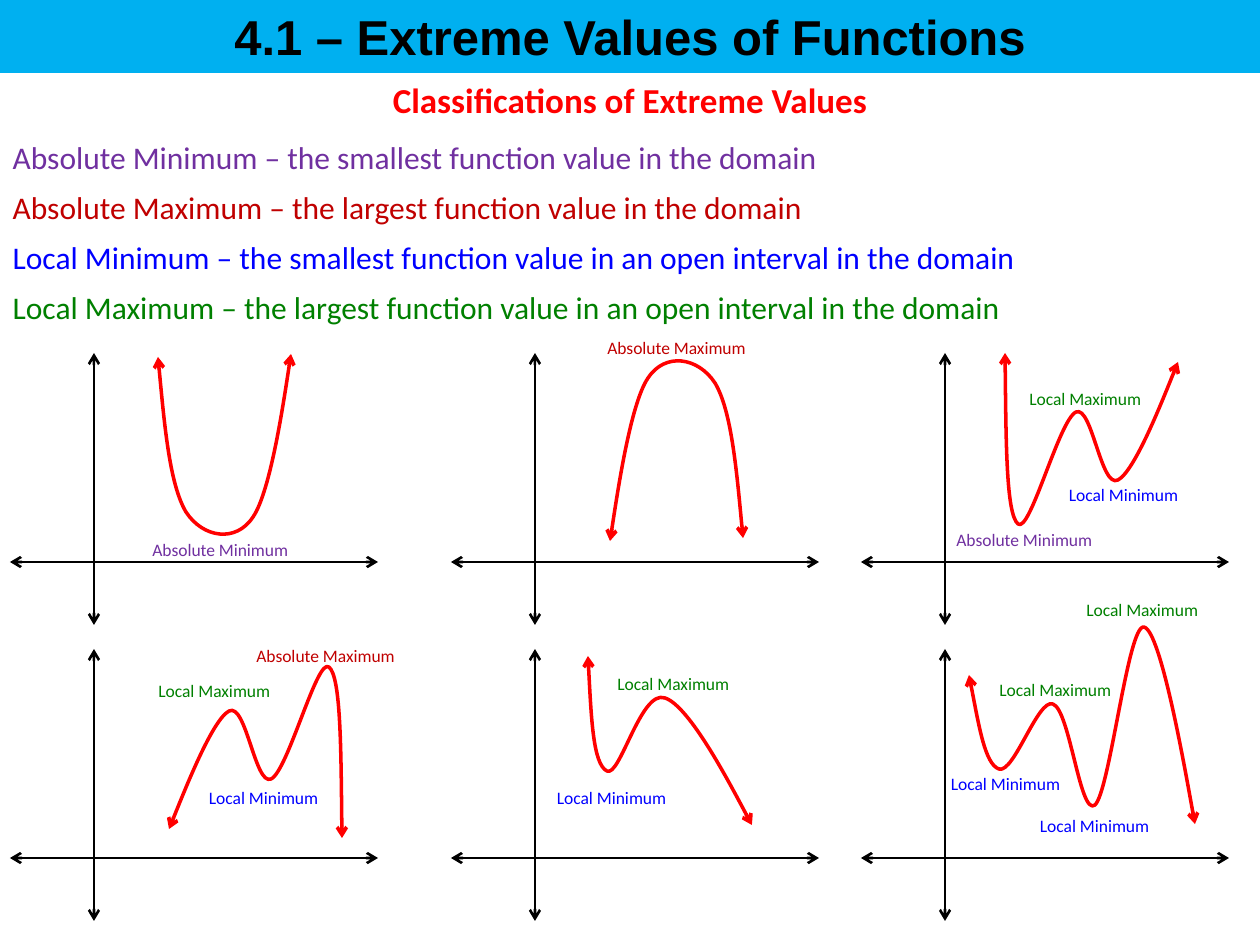
"""Build a slide that classifies the extreme values of functions."""
from dataclasses import dataclass
from itertools import product
from typing import Any

from lxml import etree
from pptx import Presentation
from pptx.dml.color import RGBColor
from pptx.enum.shapes import MSO_CONNECTOR
from pptx.enum.text import MSO_ANCHOR, MSO_AUTO_SIZE, PP_ALIGN
from pptx.oxml.ns import qn
from pptx.util import Emu, Pt

EMU_PER_PX = 914400 / 126
SLIDE_WIDTH, SLIDE_HEIGHT = 1260, 945

STRAIGHT = MSO_CONNECTOR.STRAIGHT
MIDDLE, TOP = MSO_ANCHOR.MIDDLE, MSO_ANCHOR.TOP
NO_AUTOFIT = MSO_AUTO_SIZE.NONE
LEFT, CENTER = PP_ALIGN.LEFT, PP_ALIGN.CENTER

BLACK = RGBColor(0x00, 0x00, 0x00)
SKY = RGBColor(0x00, 0xB0, 0xF0)
RED = RGBColor(0xFF, 0x00, 0x00)
PURPLE = RGBColor(0x70, 0x30, 0xA0)
DARK_RED = RGBColor(0xC0, 0x00, 0x00)
BLUE = RGBColor(0x00, 0x00, 0xFF)
GREEN = RGBColor(0x00, 0x80, 0x00)

TITLE_FONT = {"name": "Arial", "size": Pt(28), "bold": True}
HEADING_FONT = {"name": "Calibri", "size": Pt(20), "bold": True}
DEFINITION_FONT = {"name": "Calibri", "size": Pt(18), "bold": False}
LABEL_FONT = {"name": "Calibri", "size": Pt(10), "bold": False}

AXES_LEFTS, AXES_TOPS = (10, 451, 861), (353, 649)
AXES_WIDTH, AXES_HEIGHT = 368, 272
ORIGIN_X, ORIGIN_Y = 84, 209
LABEL_HEIGHT = 34

Point = tuple[int, int]


@dataclass(frozen=True)
class Extremum:
    """A kind of extreme value with its definition and label places."""
    name: str
    meaning: str
    color: RGBColor
    label_width: int
    align: Any
    labels: tuple[Point, ...]


@dataclass(frozen=True)
class Curve:
    """A chain of cubic Bezier segments inside its own box."""
    width: int
    height: int
    points: tuple[Point, ...]


@dataclass(frozen=True)
class Graph:
    """A curve placed on the slide."""
    curve: Curve
    left: int
    top: int
    rotation: int = 0


EXTREMA = (
    Extremum("Absolute Minimum", "the smallest function value in the domain",
             PURPLE, 171, LEFT, ((140, 533), (944, 523))),
    Extremum("Absolute Maximum", "the largest function value in the domain",
             DARK_RED, 177, LEFT, ((595, 331), (244, 639))),
    Extremum("Local Minimum", "the smallest function value in an open interval in the domain",
             BLUE, 141, CENTER,
             ((1053, 478), (193, 781), (541, 781), (935, 767), (1024, 809))),
    Extremum("Local Maximum", "the largest function value in an open interval in the domain",
             GREEN, 139, LEFT,
             ((1017, 382), (146, 674), (605, 667), (987, 673), (1074, 593))),
)

BOWL = Curve(133, 180, (
    (0, 3), (6, 67), (12, 131), (28, 158), (45, 184), (78, 189), (95, 163),
    (113, 137), (133, 0), (133, 0)))
TWO_VALLEYS = Curve(173, 171, (
    (0, 0), (1, 81), (1, 161), (13, 171), (25, 181), (54, 67), (71, 59),
    (87, 52), (96, 136), (113, 127), (130, 118), (173, 9), (173, 9)))
VALLEY_AND_HILL = Curve(165, 170, (
    (0, 0), (3, 54), (5, 108), (19, 115), (32, 122), (53, 33), (77, 42),
    (102, 50), (164, 169), (164, 169)))
WAVE = Curve(226, 197, (
    (0, 48), (9, 93), (16, 137), (30, 142), (45, 147), (69, 71), (84, 77),
    (101, 83), (111, 190), (126, 178), (141, 164), (159, -3), (175, 0),
    (192, 3), (226, 197), (226, 197)))

GRAPHS = (
    Graph(BOWL, 158, 354),
    Graph(BOWL, 610, 361, 180),
    Graph(TWO_VALLEYS, 1005, 353),
    Graph(TWO_VALLEYS, 169, 667, 180),
    Graph(VALLEY_AND_HILL, 588, 656),
    Graph(WAVE, 969, 627),
)


def px(length: int) -> Emu:
    """Turn px into EMU."""
    return Emu(round(length * EMU_PER_PX))


def set_values(target: Any, values: dict[str, Any]) -> None:
    """Set each attribute named in values."""
    for name, value in values.items():
        setattr(target, name, value)


def place(shape: Any, left: int, top: int, width: int, height: int) -> None:
    """Move and size a shape in px."""
    set_values(shape, {"left": px(left), "top": px(top),
                       "width": px(width), "height": px(height)})


def write(paragraph: Any, text: str, font: dict[str, Any], color: RGBColor, align: Any) -> None:
    """Fill a paragraph with formatted text."""
    paragraph.text = text
    paragraph.alignment = align
    set_values(paragraph.font, font)
    paragraph.font.color.rgb = color


def add_text(slide: Any, box: tuple[int, int, int, int], text: str,
             font: dict[str, Any], color: RGBColor, align: Any) -> None:
    """Add a wrapped one-paragraph text box."""
    frame = slide.shapes.add_textbox(*map(px, box)).text_frame
    frame.word_wrap = True
    write(frame.paragraphs[0], text, font, color, align)


def style_stroke(shape: Any, color: RGBColor, width: float) -> None:
    """Give a line its colour, width and an arrow at both ends."""
    shape.line.color.rgb = color
    shape.line.width = Pt(width)
    properties = shape.element.spPr
    stroke = properties.find(qn("a:ln"))
    for end in ("a:headEnd", "a:tailEnd"):
        etree.SubElement(stroke, qn(end), type="arrow")
    etree.SubElement(properties, qn("a:effectLst"))


def draw_axes(slide: Any, left: int, top: int) -> None:
    """Draw a grouped pair of crossing axes."""
    group = slide.shapes.add_group_shape()
    x, y = left + ORIGIN_X, top + ORIGIN_Y
    for ends in ((x, top, x, top + AXES_HEIGHT), (left, y, left + AXES_WIDTH, y)):
        axis = group.shapes.add_connector(STRAIGHT, *map(px, ends))
        style_stroke(axis, BLACK, 1.5)


def draw_graph(slide: Any, graph: Graph) -> None:
    """Draw a smooth curve as a freeform."""
    curve = graph.curve
    builder = slide.shapes.build_freeform(graph.left, graph.top, scale=EMU_PER_PX)
    builder.add_line_segments([(graph.left + curve.width, graph.top + curve.height)], close=False)
    shape = builder.convert_to_shape()
    outline = shape.element.spPr.find(".//" + qn("a:path"))
    for segment in list(outline):
        outline.remove(segment)
    steps = [("a:moveTo", curve.points[:1])]
    steps += [("a:cubicBezTo", curve.points[i:i + 3]) for i in range(1, len(curve.points), 3)]
    for tag, points in steps:
        step = etree.SubElement(outline, qn(tag))
        for x, y in points:
            etree.SubElement(step, qn("a:pt"), x=str(x), y=str(y))
    shape.fill.background()
    shape.rotation = graph.rotation
    style_stroke(shape, RED, 2)


def fill_title(title: Any) -> None:
    """Turn the title placeholder into the top band."""
    place(title, 0, 0, SLIDE_WIDTH, 72)
    title.fill.solid()
    title.fill.fore_color.rgb = SKY
    title.line.color.rgb = SKY
    title.line.width = Pt(0.75)
    set_values(title.text_frame, {"vertical_anchor": MIDDLE, "auto_size": NO_AUTOFIT})
    write(title.text_frame.paragraphs[0], "4.1 – Extreme Values of Functions",
          TITLE_FONT, BLACK, CENTER)


def fill_definitions(body: Any) -> None:
    """List the definitions in the body placeholder."""
    place(body, 0, 132, SLIDE_WIDTH, 204)
    frame = body.text_frame
    set_values(frame, {"vertical_anchor": TOP, "auto_size": NO_AUTOFIT, "word_wrap": True})
    for index, extremum in enumerate(EXTREMA):
        paragraph = frame.add_paragraph() if index else frame.paragraphs[0]
        paragraph.space_before = Pt(7 if index else 0)
        properties = paragraph._p.get_or_add_pPr()
        set_values(properties, {})
        properties.set("marL", "0")
        properties.set("indent", "0")
        etree.SubElement(properties, qn("a:buNone"))
        write(paragraph, f"{extremum.name} – {extremum.meaning}",
              DEFINITION_FONT, extremum.color, LEFT)


def main() -> None:
    """Assemble and save the slide."""
    deck = Presentation()
    deck.slide_width, deck.slide_height = px(SLIDE_WIDTH), px(SLIDE_HEIGHT)
    slide = deck.slides.add_slide(deck.slide_layouts[1])
    fill_title(slide.shapes.title)
    fill_definitions(slide.placeholders[1])
    add_text(slide, (0, 72, SLIDE_WIDTH, 55), "Classifications of Extreme Values",
             HEADING_FONT, RED, CENTER)
    for top, left in product(AXES_TOPS, AXES_LEFTS):
        draw_axes(slide, left, top)
    for graph in GRAPHS:
        draw_graph(slide, graph)
    for extremum in EXTREMA:
        for left, top in extremum.labels:
            add_text(slide, (left, top, extremum.label_width, LABEL_HEIGHT),
                     extremum.name, LABEL_FONT, extremum.color, extremum.align)
    deck.save("out.pptx")


if __name__ == "__main__":
    main()
